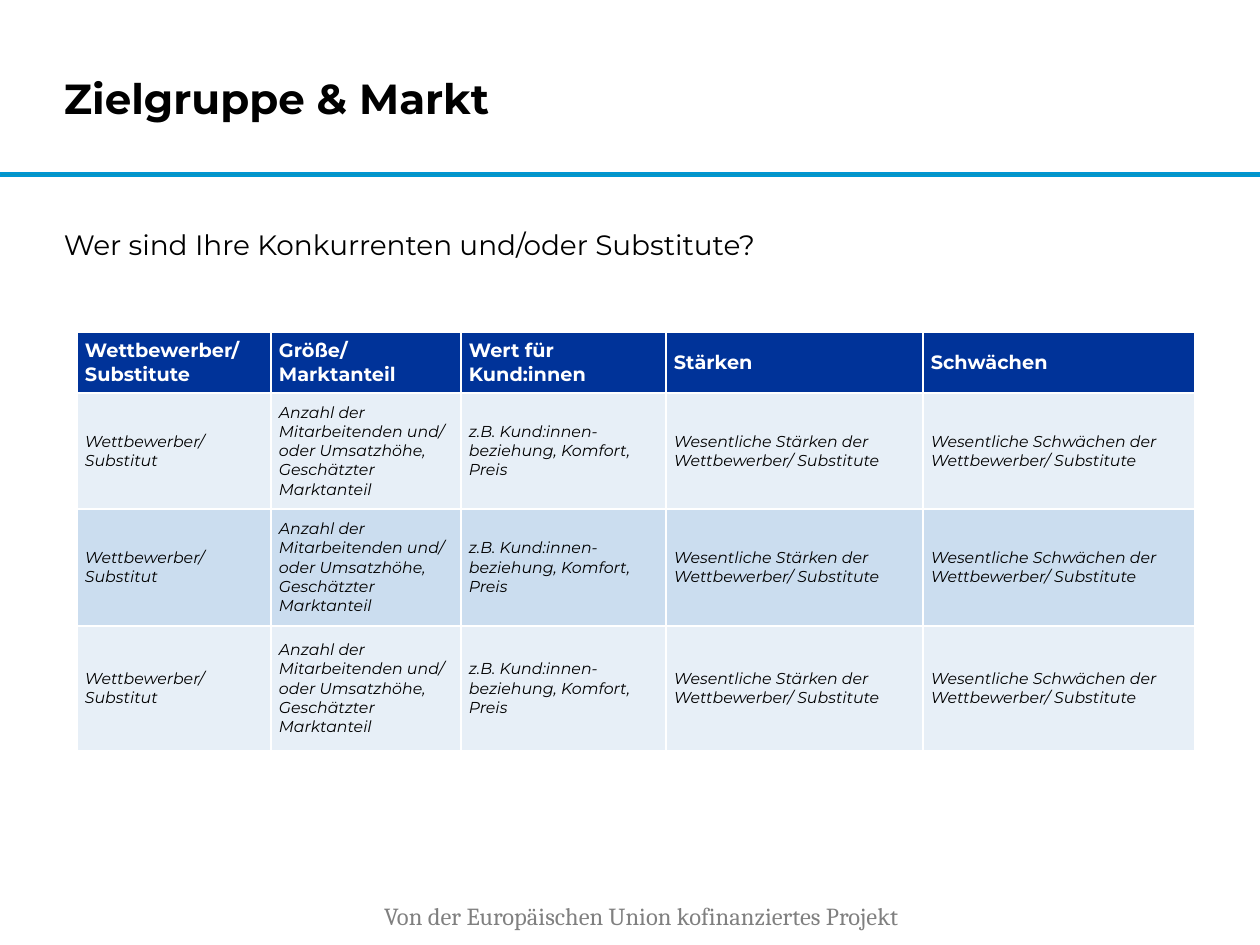
from dataclasses import dataclass

from lxml import etree
from pptx import Presentation
from pptx.dml.color import RGBColor
from pptx.enum.shapes import MSO_SHAPE
from pptx.enum.text import MSO_ANCHOR
from pptx.oxml.ns import qn
from pptx.util import Pt

RECTANGLE = MSO_SHAPE.RECTANGLE
TOP = MSO_ANCHOR.TOP
MIDDLE = MSO_ANCHOR.MIDDLE
EMU_PER_PX = 914400 / 126


@dataclass(frozen=True)
class Theme:
    font: str = "Montserrat"
    footer_font: str = "Cambria"
    text: str = "000000"
    footer: str = "808080"
    rule_fill: str = "0C94B7"
    rule_line: str = "0096D3"
    header_fill: str = "003399"
    header_text: str = "FFFFFF"
    border: str = "FFFFFF"
    bands: tuple = ("E7EFF7", "CBDDEF")
    title_size: int = 24
    question_size: int = 16
    footer_size: int = 14
    header_size: int = 11
    cell_size: int = 9


THEME = Theme()

COLUMN_WIDTHS = (194, 190, 205, 257, 272)
ROW_HEIGHTS = (61, 116, 117, 125)
HEADER = (
    "Wettbewerber/\nSubstitute",
    "Größe/\nMarktanteil",
    "Wert für Kund:innen",
    "Stärken",
    "Schwächen",
)
COMPETITOR = (
    "Wettbewerber/\nSubstitut",
    "Anzahl der Mitarbeitenden und/\noder Umsatzhöhe, Geschätzter Marktanteil",
    "z.B. Kund:innen-beziehung, Komfort, Preis",
    "Wesentliche Stärken der Wettbewerber/ Substitute",
    "Wesentliche Schwächen der Wettbewerber/ Substitute",
)


def px(length):
    return round(length * EMU_PER_PX)


def rgb(color):
    return RGBColor.from_string(color)


def style_paragraph(paragraph, size, color, name=THEME.font, bold=False, italic=False):
    font = paragraph.font
    font.name = name
    font.size = Pt(size)
    font.bold = bold
    font.italic = italic
    font.color.rgb = rgb(color)


def add_text(slide, text, box, size, color, margins=(0, 0), anchor=TOP, **style):
    """Add one paragraph; margins are horizontal and vertical px."""
    frame = slide.shapes.add_textbox(*map(px, box)).text_frame
    frame.word_wrap = True
    frame.vertical_anchor = anchor
    frame.margin_left = frame.margin_right = px(margins[0])
    frame.margin_top = frame.margin_bottom = px(margins[1])
    frame.text = text
    style_paragraph(frame.paragraphs[0], size, color, **style)


def add_rule(slide):
    rule = slide.shapes.add_shape(RECTANGLE, 0, px(173), px(1260), px(3))
    rule.shadow.inherit = False
    rule.fill.solid()
    rule.fill.fore_color.rgb = rgb(THEME.rule_fill)
    rule.line.color.rgb = rgb(THEME.rule_line)
    rule.line.width = Pt(1)


def add_borders(cell):
    properties = cell._tc.get_or_add_tcPr()
    for side in ("lnL", "lnR", "lnT", "lnB"):
        line = etree.SubElement(properties, qn(f"a:{side}"), w=str(Pt(1)))
        fill = etree.SubElement(line, qn("a:solidFill"))
        etree.SubElement(fill, qn("a:srgbClr"), val=THEME.border)


def fill_cell(cell, text, fill, **style):
    add_borders(cell)
    cell.fill.solid()
    cell.fill.fore_color.rgb = rgb(fill)
    cell.vertical_anchor = MIDDLE
    cell.margin_left = cell.margin_right = px(8)
    cell.margin_top = cell.margin_bottom = 0
    cell.text = text
    for paragraph in cell.text_frame.paragraphs:
        style_paragraph(paragraph, **style)


def add_competitor_table(slide):
    table = slide.shapes.add_table(
        len(ROW_HEIGHTS), len(COLUMN_WIDTHS), px(77), px(332),
        px(sum(COLUMN_WIDTHS)), px(sum(ROW_HEIGHTS)),
    ).table
    for column, width in zip(table.columns, COLUMN_WIDTHS):
        column.width = px(width)
    for row, height in zip(table.rows, ROW_HEIGHTS):
        row.height = px(height)

    for index, text in enumerate(HEADER):
        fill_cell(table.cell(0, index), text, THEME.header_fill,
                  size=THEME.header_size, color=THEME.header_text, bold=True)
    for row_index in range(1, len(ROW_HEIGHTS)):
        band = THEME.bands[(row_index - 1) % len(THEME.bands)]
        for index, text in enumerate(COMPETITOR):
            fill_cell(table.cell(row_index, index), text, band,
                      size=THEME.cell_size, color=THEME.text, italic=True)


def main():
    presentation = Presentation()
    presentation.slide_width = px(1260)
    presentation.slide_height = px(945)
    slide = presentation.slides.add_slide(presentation.slide_layouts[6])

    add_rule(slide)
    add_text(slide, "Von der Europäischen Union kofinanziertes Projekt",
             (372, 895, 587, 43), THEME.footer_size, THEME.footer,
             margins=(12, 6), name=THEME.footer_font)
    add_text(slide, "Zielgruppe & Markt", (64, 23, 916, 150),
             THEME.title_size, THEME.text, anchor=MIDDLE, bold=True)
    add_text(slide, "Wer sind Ihre Konkurrenten und/oder Substitute?",
             (64, 222, 1070, 638), THEME.question_size, THEME.text, margins=(0, 6))
    add_competitor_table(slide)

    presentation.save("out.pptx")


if __name__ == "__main__":
    main()
